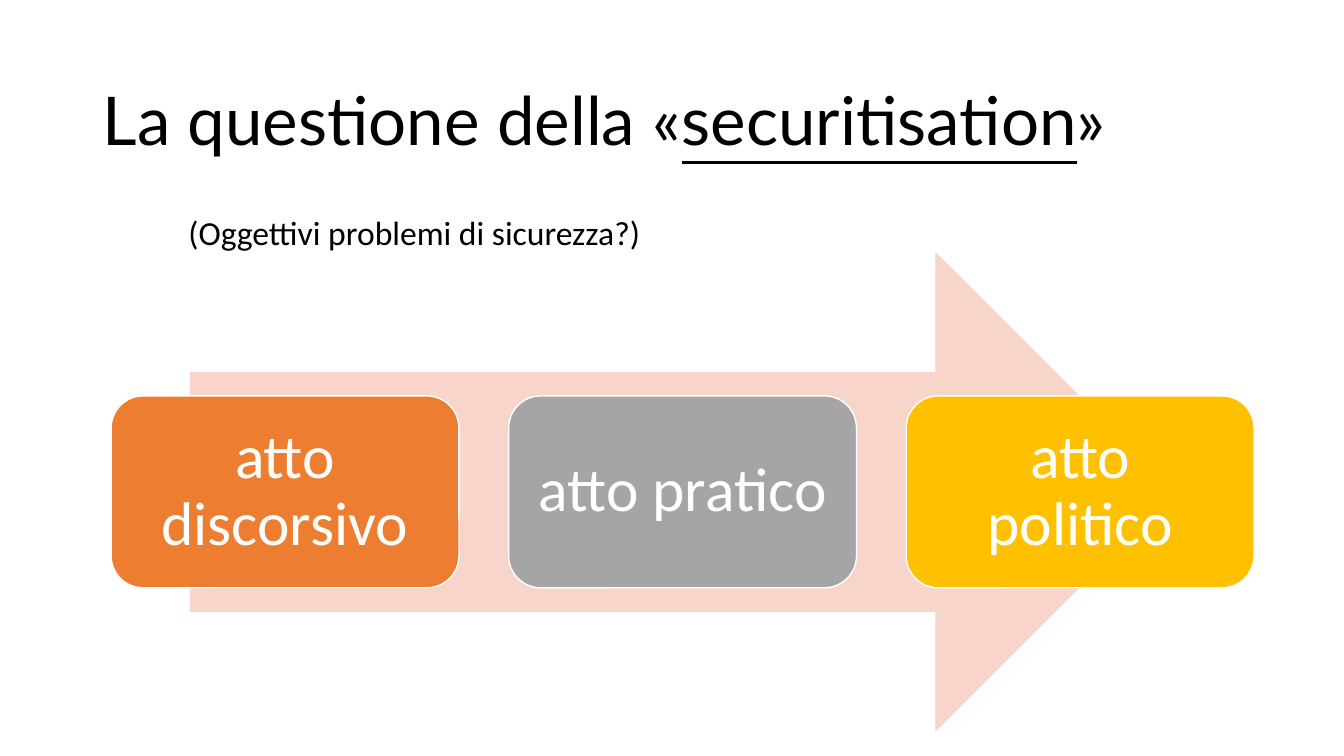
from pptx import Presentation
from pptx.dml.color import RGBColor
from pptx.enum.shapes import MSO_SHAPE as SHAPE
from pptx.enum.text import MSO_ANCHOR as ANCHOR, PP_ALIGN as ALIGN
from pptx.util import Inches, Pt

COLORS = {
    "text": "000000",
    "white": "FFFFFF",
    "arrow": "F7D5CB",
    "orange": "ED7D31",
    "gray": "A5A5A5",
    "yellow": "FFC000",
}
ACTS = [
    ("atto discorsivo", "orange"),
    ("atto pratico", "gray"),
    ("atto politico", "yellow"),
]


def rgb(name):
    return RGBColor.from_string(COLORS[name])


def add_run(p, text, size, color, font="Calibri", underline=None):
    r = p.add_run()
    r.text = text
    r.font.size = Pt(size)
    r.font.name = font
    r.font.color.rgb = rgb(color)
    r.font.underline = underline


def add_shape(s, kind, box, fill):
    """Add a filled shape without shadow or outline."""
    sp = s.shapes.add_shape(kind, *map(Inches, box))
    sp.shadow.inherit = False
    sp.fill.solid()
    sp.fill.fore_color.rgb = rgb(fill)
    sp.line.fill.background()
    return sp


def add_text_frame(s, box):
    tf = s.shapes.add_textbox(*map(Inches, box)).text_frame
    tf.word_wrap = True
    return tf


def add_title(s, box):
    tf = add_text_frame(s, box)
    tf.vertical_anchor = ANCHOR.MIDDLE
    p = tf.paragraphs[0]
    p.line_spacing = 0.9
    add_run(p, "La questione della «", 48, "text", "Lato")
    add_run(p, "securitisation", 48, "text", "Lato", underline=True)
    add_run(p, "»", 48, "text", "Lato")


def add_question(s, box):
    p = add_text_frame(s, box).paragraphs[0]
    add_run(p, "(Oggettivi problemi di sicurezza?)", 24, "text")


def add_act(s, box, text, fill):
    sp = add_shape(s, SHAPE.ROUNDED_RECTANGLE, box, fill)
    sp.line.color.rgb = rgb("white")
    sp.line.width = Pt(1)
    tf = sp.text_frame
    tf.word_wrap = True
    tf.vertical_anchor = ANCHOR.MIDDLE
    tf.margin_left = tf.margin_right = Inches(0.18)
    tf.margin_top = tf.margin_bottom = Inches(0.18)
    p = tf.paragraphs[0]
    p.alignment = ALIGN.CENTER
    p.line_spacing = 0.9
    add_run(p, text, 44, "white")


def add_process(s, box):
    """Draw the arrow and, centred over it, the row of acts."""
    left, top, width, height = box
    arrow_w, act_w, act_h = 0.85 * width, 3.45, 0.4 * height
    arrow_left = left + (width - arrow_w) / 2
    add_shape(s, SHAPE.RIGHT_ARROW, (arrow_left, top, arrow_w, height), "arrow")

    # The row is inset by one sixth of the gap between acts.
    gap = (width - 3 * act_w) / (2 + 2 / 6)
    row_left = left + gap / 6
    act_top = top + (height - act_h) / 2
    for i, (text, fill) in enumerate(ACTS):
        act_left = row_left + i * (act_w + gap)
        add_act(s, (act_left, act_top, act_w, act_h), text, fill)


def main():
    prs = Presentation()
    prs.slide_width, prs.slide_height = Inches(13.33), Inches(7.5)
    s = prs.slides.add_slide(prs.slide_layouts[6])
    add_title(s, (0.92, 0.61, 11.5, 1.24))
    add_process(s, (1.02, 2.5, 11.5, 4.76))
    add_question(s, (1.77, 2.05, 7.59, 0.5))
    prs.save("out.pptx")


if __name__ == "__main__":
    main()
